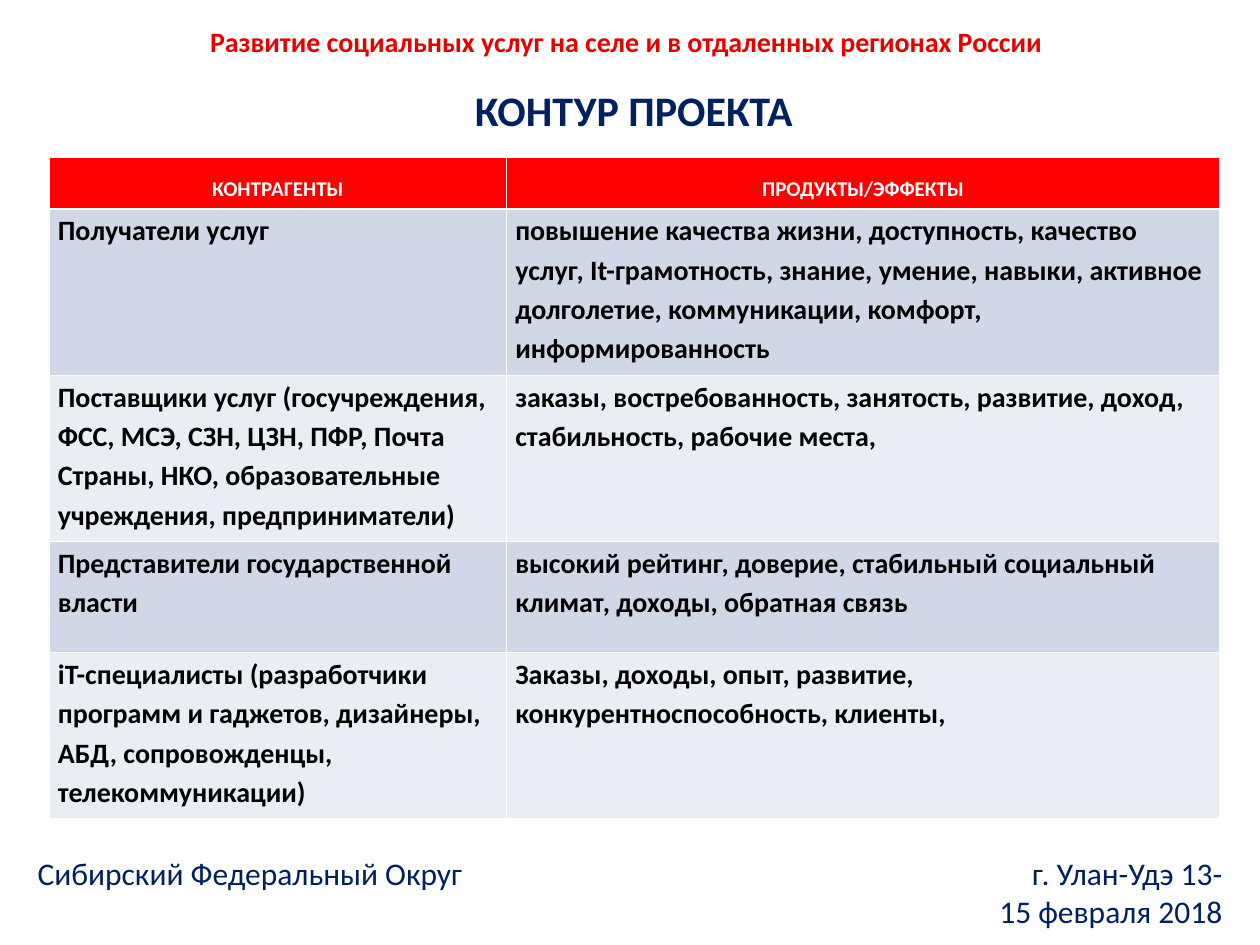
from pptx import Presentation
from pptx.dml.color import RGBColor
from pptx.enum.text import MSO_ANCHOR as ANCHOR, PP_ALIGN as ALIGN
from pptx.util import Inches, Pt

RED, HEADER_RED, NAVY = "E60000", "FF0000", "002060"
BLACK, WHITE = "000000", "FFFFFF"
BANDS = ("D0D8E8", "E9EDF4")

# text, box (left, top, width, height), size, colour, bold, alignment, anchor
TEXTS = [
    ("Развитие социальных услуг на селе и в отдаленных регионах России",
     (0.71, 0.13, 8.52, 0.39), 16, RED, True, ALIGN.CENTER, ANCHOR.MIDDLE),
    ("КОНТУР ПРОЕКТА",
     (3.67, 0.62, 2.89, 0.5), 24, NAVY, True, ALIGN.LEFT, ANCHOR.MIDDLE),
    ("Сибирский Федеральный Округ",
     (0.2, 6.78, 5, 0.59), 18, NAVY, False, ALIGN.LEFT, ANCHOR.TOP),
    ("г. Улан-Удэ 13-\v15 февраля 2018",
     (6.8, 6.78, 3, 0.59), 18, NAVY, False, ALIGN.RIGHT, ANCHOR.TOP),
]

TABLE_BOX = (0.39, 1.25, 9.29, 5.25)
COLUMN_WIDTHS = (3.63, 5.66)
ROW_HEIGHTS = (0.41, 1.32, 1.32, 0.88, 1.32)
ROWS = [
    ("КОНТРАГЕНТЫ", "ПРОДУКТЫ/ЭФФЕКТЫ"),
    ("Получатели услуг",
     "повышение качества жизни, доступность, качество услуг, It-грамотность, "
     "знание, умение, навыки, активное долголетие, коммуникации, комфорт, "
     "информированность"),
    ("Поставщики услуг (госучреждения, ФСС, МСЭ, СЗН, ЦЗН, ПФР, Почта Страны, "
     "НКО, образовательные учреждения, предприниматели)",
     "заказы, востребованность, занятость, развитие, доход, стабильность, "
     "рабочие места,"),
    ("Представители государственной власти",
     "высокий рейтинг, доверие, стабильный социальный климат, доходы, "
     "обратная связь"),
    ("iT-специалисты (разработчики программ и гаджетов, дизайнеры, АБД, "
     "сопровожденцы, телекоммуникации)",
     "Заказы, доходы, опыт, развитие, конкурентноспособность, клиенты,"),
]


def rgb(value):
    return RGBColor.from_string(value)


def write(tf, text, size, color, bold, align):
    p = tf.paragraphs[0]
    p.text = text
    p.alignment = align
    p.font.name = "Calibri"
    p.font.size = Pt(size)
    p.font.bold = bold
    p.font.color.rgb = rgb(color)
    return p


def add_text(slide, text, box, size, color, bold, align, anchor):
    tf = slide.shapes.add_textbox(*map(Inches, box)).text_frame
    tf.word_wrap = True
    tf.vertical_anchor = anchor
    tf.margin_top = tf.margin_bottom = 0
    write(tf, text, size, color, bold, align)


def fill_cell(cell, text, row):
    cell.fill.solid()
    if row == 0:
        cell.fill.fore_color.rgb = rgb(HEADER_RED)
        p = write(cell.text_frame, text, 12, WHITE, True, ALIGN.CENTER)
        p.line_spacing = 1.5
    else:
        cell.fill.fore_color.rgb = rgb(BANDS[(row - 1) % 2])
        cell.margin_left = cell.margin_right = Inches(0.07)
        cell.margin_top = cell.margin_bottom = 0
        p = write(cell.text_frame, text, 16, BLACK, True, ALIGN.LEFT)
        p.line_spacing = 1.15


def add_table(slide):
    table = slide.shapes.add_table(
        len(ROWS), len(COLUMN_WIDTHS), *map(Inches, TABLE_BOX)).table
    for column, width in zip(table.columns, COLUMN_WIDTHS):
        column.width = Inches(width)
    for i, (texts, height) in enumerate(zip(ROWS, ROW_HEIGHTS)):
        table.rows[i].height = Inches(height)
        for j, text in enumerate(texts):
            fill_cell(table.cell(i, j), text, i)


def main():
    prs = Presentation()
    prs.slide_width, prs.slide_height = Inches(10), Inches(7.5)
    slide = prs.slides.add_slide(prs.slide_layouts[6])
    for item in TEXTS:
        add_text(slide, *item)
    add_table(slide)
    prs.save("out.pptx")


if __name__ == "__main__":
    main()
